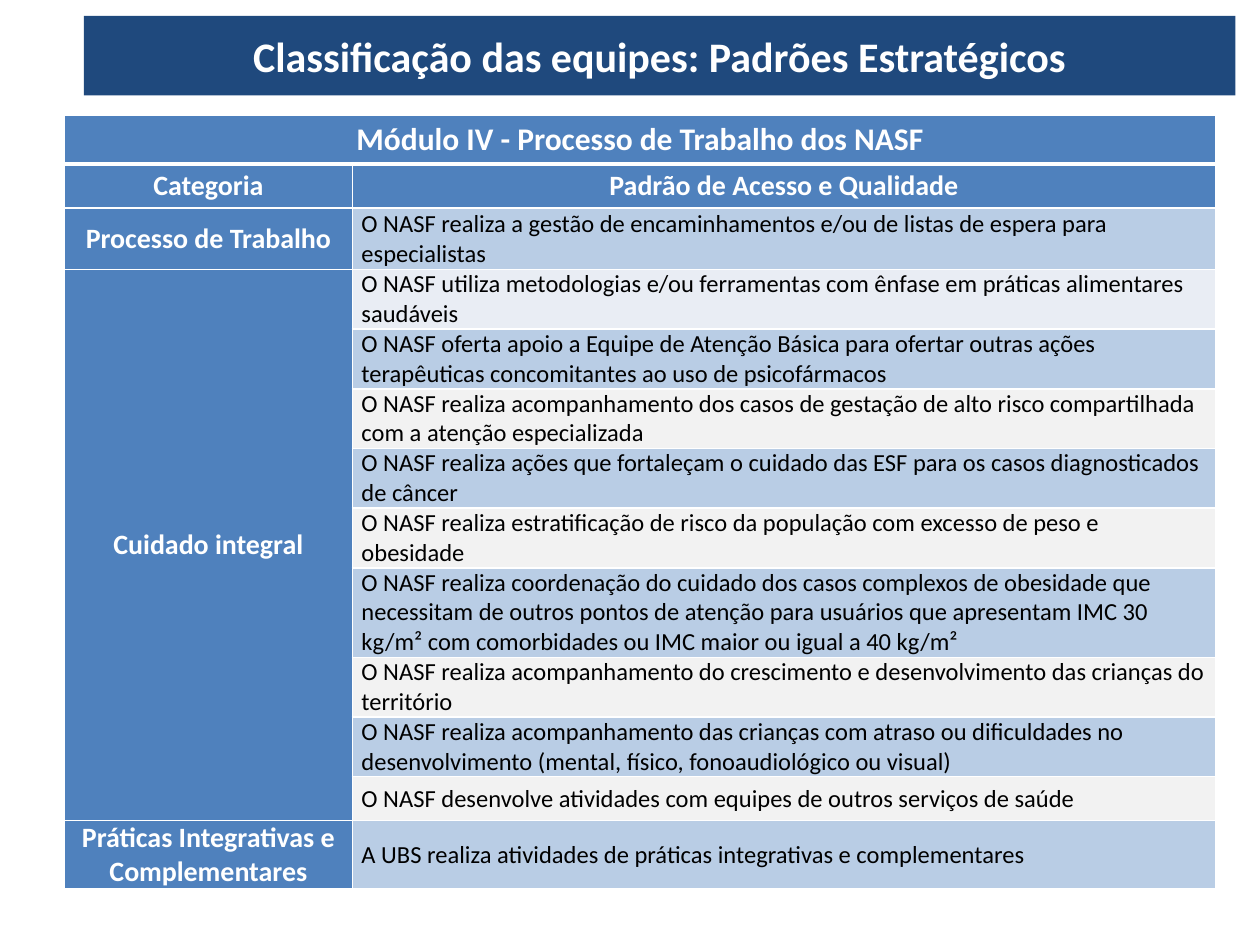
from lxml.etree import SubElement
from pptx import Presentation
from pptx.dml.color import RGBColor
from pptx.enum.text import MSO_ANCHOR, PP_ALIGN
from pptx.oxml.ns import qn
from pptx.util import Pt

# Content
TITLE = "Classificação das equipes: Padrões Estratégicos"
MODULE = "Módulo IV - Processo de Trabalho dos NASF"
HEADS = ("Categoria", "Padrão de Acesso e Qualidade")
GROUPS = [
    ("Processo de Trabalho", [
        "O NASF realiza a gestão de encaminhamentos e/ou de listas de espera para especialistas",
    ]),
    ("Cuidado integral", [
        "O NASF utiliza metodologias e/ou ferramentas com ênfase em práticas alimentares saudáveis",
        "O NASF oferta apoio a Equipe de Atenção Básica para ofertar outras ações terapêuticas concomitantes ao uso de psicofármacos",
        "O NASF realiza acompanhamento dos casos de gestação de alto risco compartilhada com a atenção especializada",
        "O NASF realiza ações que fortaleçam o cuidado das ESF para os casos diagnosticados de câncer",
        "O NASF realiza estratificação de risco da população com excesso de peso e obesidade",
        "O NASF realiza coordenação do cuidado dos casos complexos de obesidade que necessitam de outros pontos de atenção para usuários que apresentam IMC 30 kg/m² com comorbidades ou IMC maior ou igual a 40 kg/m²",
        "O NASF realiza acompanhamento do crescimento e desenvolvimento das crianças do território",
        "O NASF realiza acompanhamento das crianças com atraso ou dificuldades no desenvolvimento (mental, físico, fonoaudiológico ou visual)",
        "O NASF desenvolve atividades com equipes de outros serviços de saúde",
    ]),
    ("Práticas Integrativas e Complementares", [
        "A UBS realiza atividades de práticas integrativas e complementares",
    ]),
]

# Colours and sizes
NAVY = RGBColor(0x1F, 0x49, 0x7D)
BLUE = RGBColor(0x4F, 0x81, 0xBD)
SKY = RGBColor(0xB9, 0xCD, 0xE5)
PALE = RGBColor(0xE9, 0xED, 0xF4)
GRAY = RGBColor(0xF2, 0xF2, 0xF2)
WHITE = RGBColor(0xFF, 0xFF, 0xFF)
BLACK = RGBColor(0, 0, 0)
COLS = (164.4, 493.4)
ROWS = [28, 25.2, 35] + [33.7] * 5 + [50.4] + [33.7] * 2 + [25.2, 38]
HEAD = {"name": "Calibri", "size": Pt(16), "bold": True}
BODY = {"name": "Calibri", "size": Pt(14), "bold": False}


def style(para, form, color, align):
    para.alignment = align
    for key, val in form.items():
        setattr(para.font, key, val)
    para.font.color.rgb = color


def edge(cell, row):
    """White rules, thick between the first two rows."""
    wide = {"lnB": 0, "lnT": 1}
    props = cell._tc.get_or_add_tcPr()
    for tag in ("lnL", "lnR", "lnT", "lnB"):
        width = 3 if wide.get(tag) == row else 1
        line = SubElement(props, qn("a:" + tag), w=str(Pt(width)))
        fill = SubElement(line, qn("a:solidFill"))
        SubElement(fill, qn("a:srgbClr"), val=str(WHITE))


def put(cell, text, form, color, align):
    cell.text = text
    style(cell.text_frame.paragraphs[0], form, color, align)


deck = Presentation()
deck.slide_width, deck.slide_height = Pt(720), Pt(540)
slide = deck.slides.add_slide(deck.slide_layouts[5])

# Title bar
title = slide.shapes.title
title.left, title.top, title.width, title.height = map(Pt, (48, 9, 658, 45.5))
title.fill.solid()
title.fill.fore_color.rgb = NAVY
title.text_frame.text = TITLE
title.text_frame.vertical_anchor = MSO_ANCHOR.MIDDLE
style(title.text_frame.paragraphs[0], HEAD | {"size": Pt(24)}, WHITE, PP_ALIGN.CENTER)

# Table grid
grid = slide.shapes.add_table(len(ROWS), len(COLS), Pt(36.9), Pt(65.8),
                              Pt(sum(COLS)), Pt(sum(ROWS))).table
for col, width in zip(grid.columns, COLS):
    col.width = Pt(width)
for row, tall in enumerate(ROWS):
    grid.rows[row].height = Pt(tall)
    band = SKY if row % 2 == 0 else PALE if row == 3 else GRAY
    for col in range(len(COLS)):
        cell = grid.cell(row, col)
        edge(cell, row)
        cell.fill.solid()
        cell.fill.fore_color.rgb = BLUE if row < 2 or col == 0 else band
        cell.vertical_anchor = MSO_ANCHOR.MIDDLE
        cell.margin_left = cell.margin_right = Pt(5.3)
        cell.margin_top = cell.margin_bottom = 0

# Heading rows
grid.cell(0, 0).merge(grid.cell(0, 1))
put(grid.cell(0, 0), MODULE, HEAD | {"size": Pt(18)}, WHITE, PP_ALIGN.CENTER)
for col, text in enumerate(HEADS):
    put(grid.cell(1, col), text, HEAD, WHITE, PP_ALIGN.CENTER)

# Categories and their standards
row = 2
for name, items in GROUPS:
    if len(items) > 1:
        grid.cell(row, 0).merge(grid.cell(row + len(items) - 1, 0))
    put(grid.cell(row, 0), name, HEAD, WHITE, PP_ALIGN.CENTER)
    for text in items:
        put(grid.cell(row, 1), text, BODY, BLACK, PP_ALIGN.LEFT)
        row += 1

deck.save("out.pptx")
